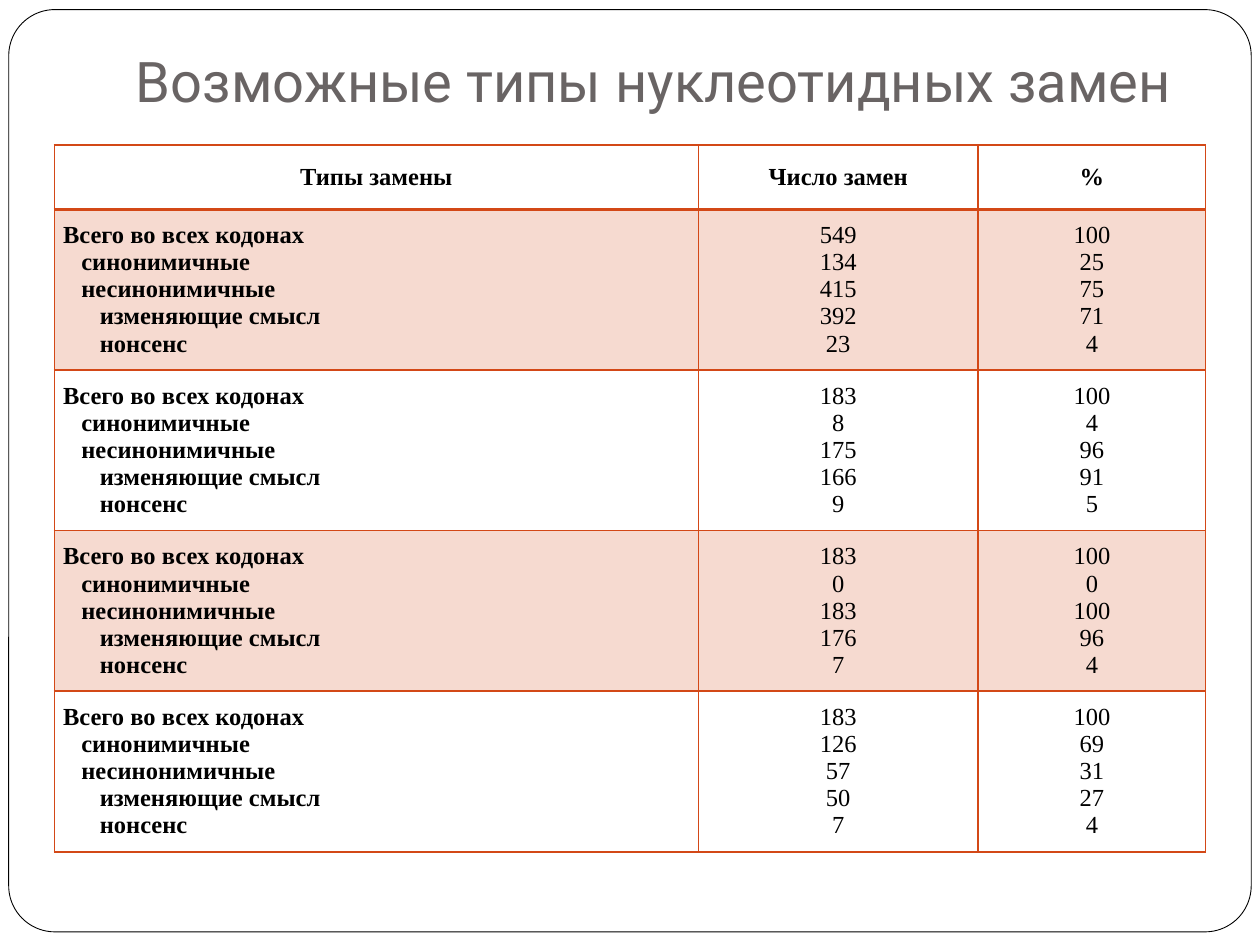
from lxml import etree
from pptx import Presentation
from pptx.dml.color import RGBColor
from pptx.enum import shapes, text
from pptx.oxml import ns
from pptx.util import Pt

ACCENT, BLACK, WHITE, GREY = "D34817", "000000", "FFFFFF", "696464"
HEADINGS = ["Типы замены", "Число замен", "%"]
TYPES = [
    ("Всего во всех кодонах", 0),
    ("синонимичные", 1),
    ("несинонимичные", 1),
    ("изменяющие смысл", 2),
    ("нонсенс", 2),
]
GROUPS = [
    ([549, 134, 415, 392, 23], [100, 25, 75, 71, 4]),
    ([183, 8, 175, 166, 9], [100, 4, 96, 91, 5]),
    ([183, 0, 183, 176, 7], [100, 0, 100, 96, 4]),
    ([183, 126, 57, 50, 7], [100, 69, 31, 27, 4]),
]
COLUMN_WIDTHS = [368, 160, 130]
HEADER_HEIGHT, GROUP_HEIGHT = 36.8, 91.8
INDENT = 10.5


def color(hex_value):
    """Turn a hex string into a colour."""
    return RGBColor.from_string(hex_value)


def apply(target, formats):
    """Set each attribute in formats on target."""
    for name, value in formats.items():
        setattr(target, name, value)


def style_font(font, hex_value, formats):
    """Set a font's colour and its other formats."""
    font.color.rgb = color(hex_value)
    apply(font, formats)


def add_frame(slide, left, top, width, height):
    """Draw the rounded page frame behind the title."""
    frame = slide.shapes.add_shape(
        shapes.MSO_SHAPE.ROUNDED_RECTANGLE, Pt(left), Pt(top), Pt(width), Pt(height))
    frame.adjustments[0] = 0.05
    frame.shadow.inherit = False
    frame.fill.solid()
    frame.fill.fore_color.rgb = color(WHITE)
    frame.line.color.rgb = color(BLACK)
    frame.line.width = Pt(0.5)
    slide.shapes.title.element.addprevious(frame.element)


def add_title(slide, left, top, width, height):
    """Place and format the title placeholder."""
    title = slide.shapes.title
    apply(title, {"left": Pt(left), "top": Pt(top), "width": Pt(width), "height": Pt(height)})
    apply(title.text_frame, {
        "text": "Возможные типы нуклеотидных замен", "word_wrap": True,
        "auto_size": text.MSO_AUTO_SIZE.NONE, "vertical_anchor": text.MSO_ANCHOR.BOTTOM,
        "margin_left": Pt(7.2), "margin_right": Pt(7.2),
        "margin_top": Pt(3.6), "margin_bottom": Pt(7.2)})
    heading = title.text_frame.paragraphs[0]
    heading.alignment = text.PP_ALIGN.LEFT
    style_font(heading.runs[0].font, GREY, {"name": "Roboto", "size": Pt(32), "bold": False})


def border_cell(cell, widths):
    """Draw the cell borders, given a width for each side."""
    properties = cell._tc.get_or_add_tcPr()
    for side, width in widths.items():
        line = etree.SubElement(properties, ns.qn(f"a:ln{side}"), w=str(Pt(width)))
        fill = etree.SubElement(line, ns.qn("a:solidFill"))
        etree.SubElement(fill, ns.qn("a:srgbClr"), val=ACCENT)


def shade_cell(cell, shaded):
    """Tint a shaded cell with the accent and leave others clear."""
    if not shaded:
        cell.fill.background()
        return
    cell.fill.solid()
    cell.fill.fore_color.rgb = color(ACCENT)
    tint = cell._tc.tcPr.find(".//" + ns.qn("a:srgbClr") + "[last()]")
    tint = cell._tc.tcPr.find(ns.qn("a:solidFill")).find(ns.qn("a:srgbClr"))
    etree.SubElement(tint, ns.qn("a:alpha"), val="20000")


def fill_cell(cell, lines, bold, alignment):
    """Write (wording, level) lines into a cell."""
    apply(cell, {"margin_left": Pt(5), "margin_right": Pt(5), "margin_top": 0,
                 "margin_bottom": 0, "vertical_anchor": text.MSO_ANCHOR.MIDDLE})
    cell.text = "\n".join(str(wording) for wording, level in lines)
    for paragraph, (wording, level) in zip(cell.text_frame.paragraphs, lines):
        paragraph.alignment = alignment
        if level:
            paragraph._p.get_or_add_pPr().set("marL", str(Pt(level * INDENT)))
        style_font(paragraph.runs[0].font, BLACK,
                   {"name": "Times New Roman", "size": Pt(14), "bold": bold})


def add_substitution_table(slide, left, top):
    """Build the table of substitution types, counts and shares."""
    heights = [HEADER_HEIGHT] + [GROUP_HEIGHT] * len(GROUPS)
    table = slide.shapes.add_table(
        len(heights), len(COLUMN_WIDTHS), Pt(left), Pt(top),
        Pt(sum(COLUMN_WIDTHS)), Pt(sum(heights))).table
    for column, width in zip(table.columns, COLUMN_WIDTHS):
        column.width = Pt(width)
    for row, height in zip(table.rows, heights):
        row.height = Pt(height)

    contents = [[[(heading, 0)] for heading in HEADINGS]]
    for group in GROUPS:
        contents.append([TYPES] + [[(value, 0) for value in values] for values in group])
    for r, row_lines in enumerate(contents):
        for c, lines in enumerate(row_lines):
            cell = table.cell(r, c)
            is_type = r > 0 and c == 0
            fill_cell(cell, lines, r == 0 or c == 0,
                      text.PP_ALIGN.LEFT if is_type else text.PP_ALIGN.CENTER)
            border_cell(cell, {"L": 1, "R": 1, "T": 2 if r == 1 else 1, "B": 2 if r == 0 else 1})
            shade_cell(cell, r % 2 == 1)


def main():
    """Build and save the slide."""
    deck = Presentation()
    apply(deck, {"slide_width": Pt(720), "slide_height": Pt(540)})
    slide = deck.slides.add_slide(deck.slide_layouts[5])
    add_frame(slide, 5, 5.5, 710, 527)
    add_title(slide, 70.5, 15, 612, 57)
    add_substitution_table(slide, 31, 82.8)
    deck.save("out.pptx")


if __name__ == "__main__":
    main()
